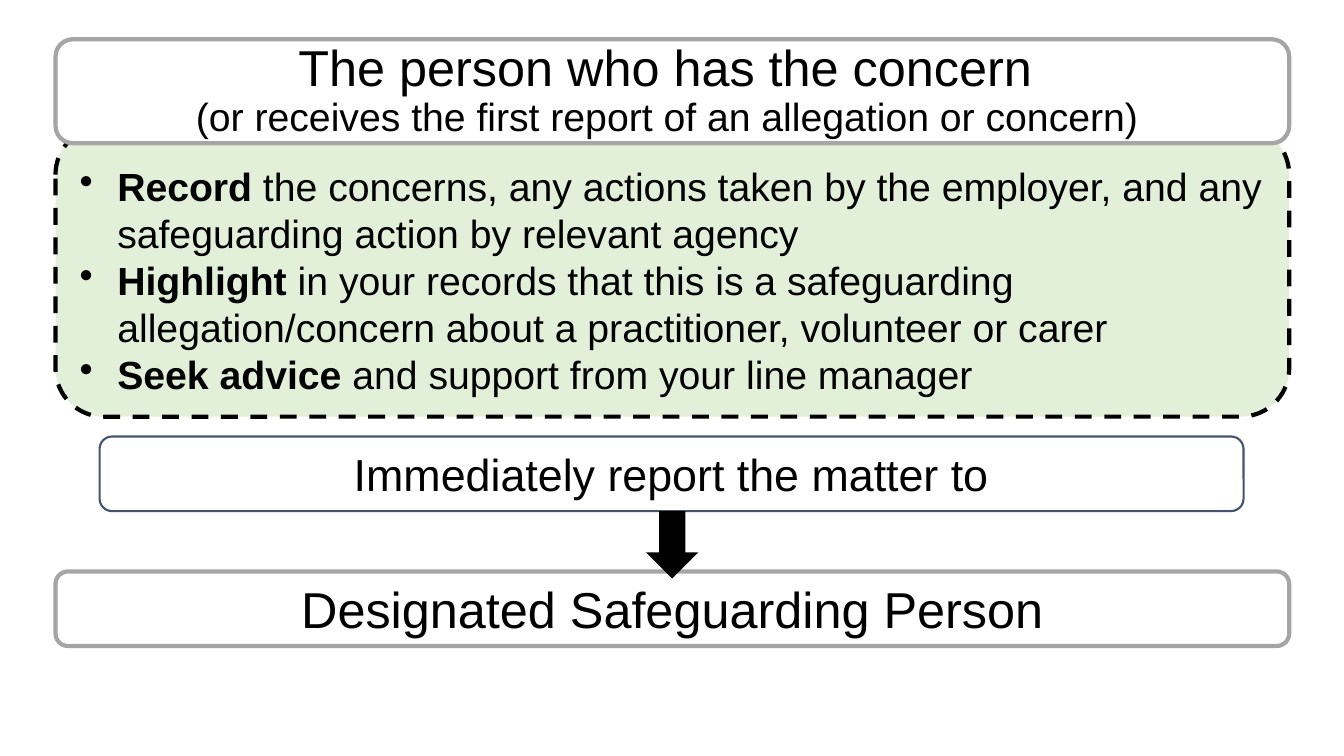
"""Build a slide showing how a safeguarding concern is reported."""
import pptx
import pptx.util
import pptx.dml.color
import pptx.enum.dml
import pptx.enum.shapes
import pptx.enum.text
import lxml.etree
from pptx.util import Cm, Pt

BLACK = pptx.dml.color.RGBColor(0x00, 0x00, 0x00)
WHITE = pptx.dml.color.RGBColor(0xFF, 0xFF, 0xFF)
GREY = pptx.dml.color.RGBColor(0xA5, 0xA5, 0xA5)
SLATE = pptx.dml.color.RGBColor(0x44, 0x54, 0x6A)
GREEN = pptx.dml.color.RGBColor(0xE2, 0xF0, 0xD9)
KIND = pptx.enum.shapes.MSO_SHAPE
ALIGN = pptx.enum.text.PP_ALIGN
ANCHOR = pptx.enum.text.MSO_ANCHOR

deck = pptx.Presentation()
deck.slide_width = Cm(33.87)
deck.slide_height = Cm(19.05)
slide = deck.slides.add_slide(deck.slide_layouts[6])


def add_box(left, top, width, height, fill, line, weight):
    box = slide.shapes.add_shape(
        KIND.ROUNDED_RECTANGLE, Cm(left), Cm(top), Cm(width), Cm(height))
    box.shadow.inherit = False
    box.fill.solid()
    box.fill.fore_color.rgb = fill
    box.line.color.rgb = line
    box.line.width = Pt(weight)
    box.text_frame.word_wrap = True
    box.text_frame.vertical_anchor = ANCHOR.MIDDLE
    return box


def add_text(para, runs, align):
    para.alignment = align
    para.font.name = "Arial"
    para.font.color.rgb = BLACK
    for words, size, bold in runs:
        run = para.add_run()
        run.text = words
        run.font.name = "Arial"
        run.font.color.rgb = BLACK
        run.font.size = Pt(size)
        run.font.bold = bold


person = add_box(1.4, 14.4, 31.09, 1.88, WHITE, GREY, 3)
add_text(person.text_frame.paragraphs[0],
         [("Designated Safeguarding Person", 36, False)], ALIGN.CENTER)

steps = add_box(1.4, 3.18, 31.09, 7.32, GREEN, BLACK, 3)
steps.line.dash_style = pptx.enum.dml.MSO_LINE.DASH
frame = steps.text_frame
frame.vertical_anchor = ANCHOR.BOTTOM
tasks = [
    ("Record", " the concerns, any actions taken by the employer, and any "
     "safeguarding action by relevant agency"),
    ("Highlight", " in your records that this is a safeguarding "
     "allegation/concern about a practitioner, volunteer or carer"),
    ("Seek advice ", "and support from your line manager"),
]
for index, (verb, rest) in enumerate(tasks):
    para = frame.add_paragraph() if index else frame.paragraphs[0]
    add_text(para, [(verb, 28, True), (rest, 28, False)], ALIGN.LEFT)
    props = para._p.get_or_add_pPr()
    props.set("marL", str(Cm(0.95)))
    props.set("indent", str(-Cm(0.95)))
    bullet = lxml.etree.Element(pptx.oxml.ns.qn("a:buChar"), char="•")
    props.insert(0, bullet)

header = add_box(1.4, 0.99, 31.09, 2.62, WHITE, GREY, 3)
title = header.text_frame.paragraphs[0]
title.line_spacing = 0.9
add_text(title, [("The person who has the concern ", 36, False)], ALIGN.CENTER)
title.add_line_break()
add_text(title, [("(or receives the first report of an allegation or concern) ",
                  28, False)], ALIGN.CENTER)

report = add_box(2.51, 11, 28.83, 1.88, WHITE, SLATE, 1.5)
add_text(report.text_frame.paragraphs[0],
         [("Immediately report the matter to", 32, False)], ALIGN.CENTER)

arrow = slide.shapes.add_shape(
    KIND.DOWN_ARROW, Cm(16.28), Cm(12.88), Cm(1.32), Cm(1.7))
arrow.shadow.inherit = False
arrow.fill.solid()
arrow.fill.fore_color.rgb = BLACK
arrow.line.fill.background()

deck.save("out.pptx")
